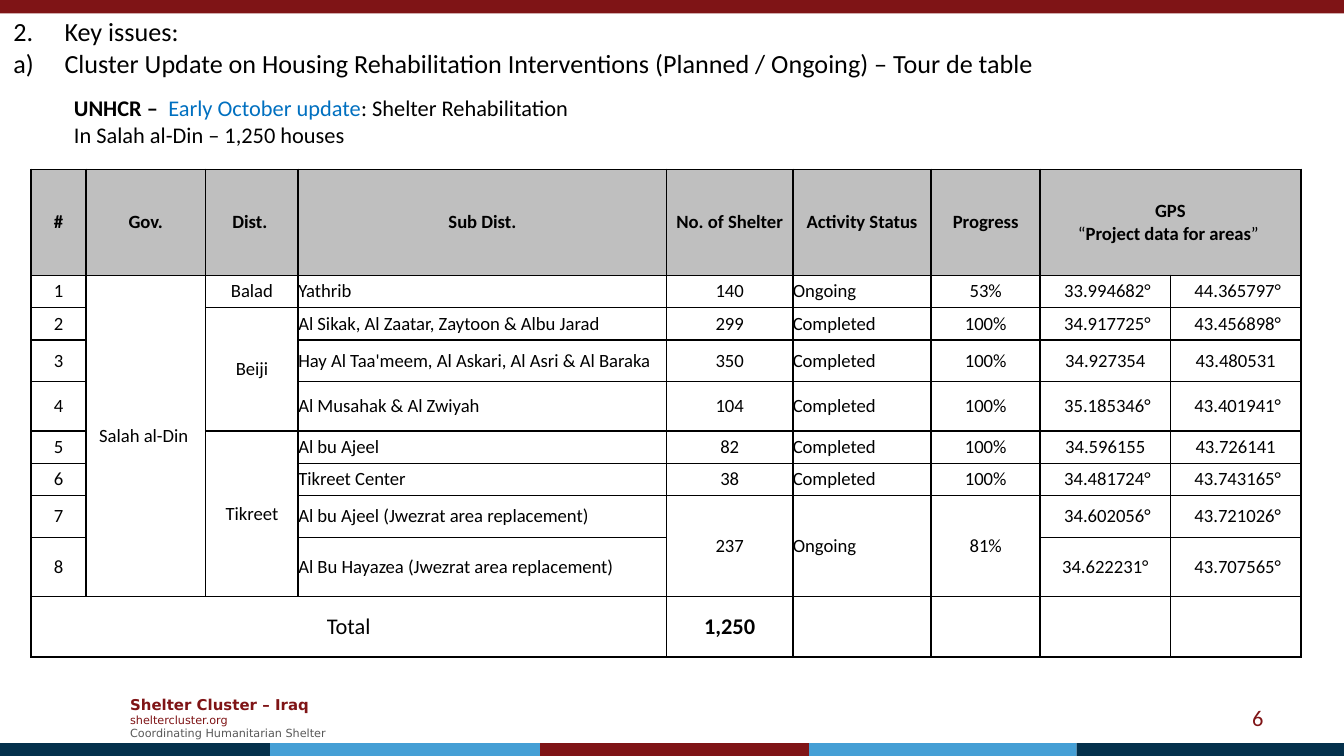
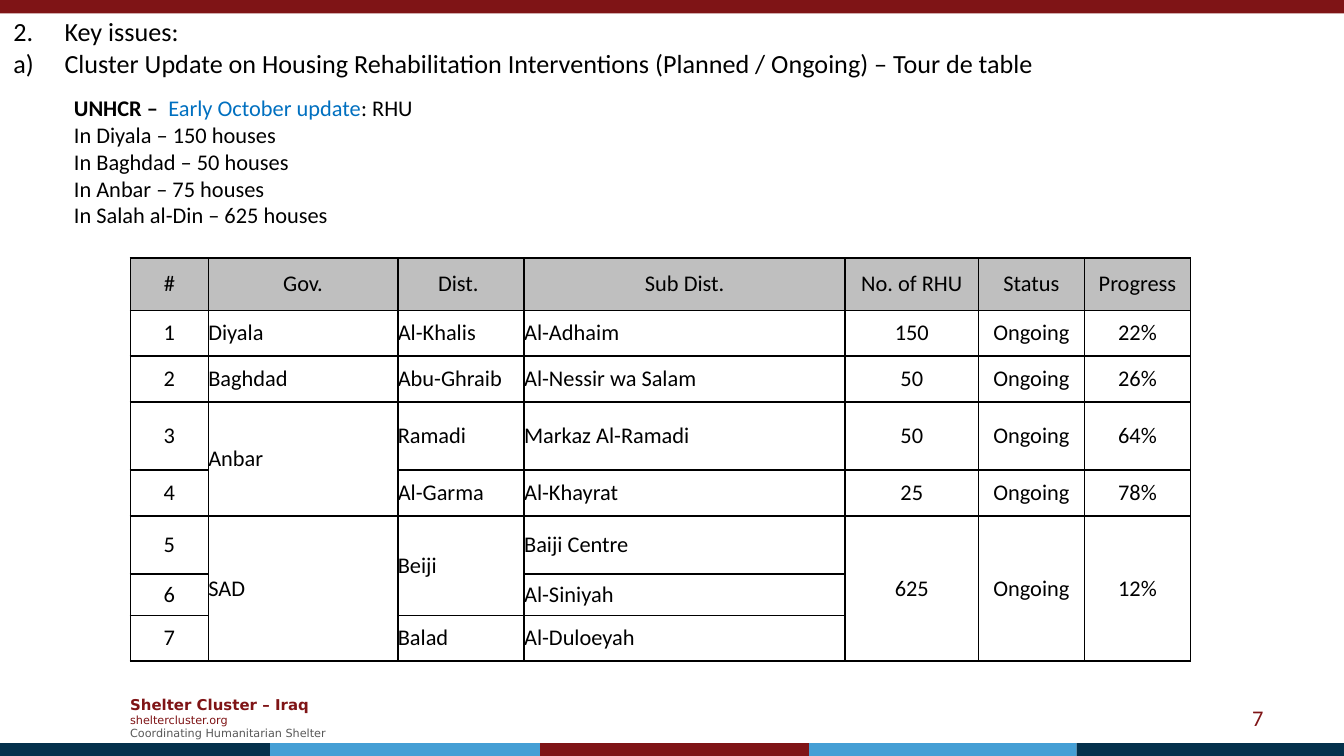
from dataclasses import dataclass
from lxml.etree import SubElement
from pptx import Presentation
from pptx.dml.color import RGBColor
from pptx.enum.shapes import MSO_SHAPE
from pptx.enum.text import MSO_ANCHOR, MSO_AUTO_SIZE, PP_ALIGN
from pptx.oxml.ns import qn
from pptx.util import Inches, Pt


@dataclass(frozen=True)
class Theme:
    red: str = "7F1416"
    navy: str = "04314C"
    sky: str = "459FD5"
    link: str = "0070C0"
    gray: str = "595959"
    head: str = "BFBFBF"
    black: str = "000000"
    sans: str = "Calibri"
    brand: str = "DejaVu Sans"
    title: int = 14
    text: int = 12
    cell: int = 10
    name: int = 8
    small: int = 6


T = Theme()
PLAIN = {"name": T.sans, "size": T.text, "bold": False, "color": T.black}
BOLD = {"bold": True}
GPS = [[("GPS", {})], [("“", {"bold": False}), ("Project data for areas", {}), ("” ", {"bold": False})]]

HOMES = [
    ["#", "Gov.", "Dist. ", "Sub Dist.", "No. of Shelter", "Activity Status", "Progress", GPS, "<"],
    ["1", "Salah al-Din ", "Balad", "Yathrib", "140", "Ongoing", "53%", " 33.994682°", " 44.365797°"],
    ["2", "^", "Beiji", "Al Sikak, Al Zaatar, Zaytoon & Albu Jarad", "299", "Completed", "100%",
     " 34.917725°", " 43.456898°"],
    ["3", "^", "^", "Hay Al Taa'meem, Al Askari, Al Asri & Al Baraka", "350", "Completed", "100%",
     "34.927354", "43.480531"],
    ["4", "^", "^", "Al Musahak & Al Zwiyah", "104", "Completed", "100%", " 35.185346°", " 43.401941°"],
    ["5", "^", "Tikreet", "Al bu Ajeel", "82", "Completed", "100%", "34.596155", "43.726141"],
    ["6", "^", "^", "Tikreet Center", "38", "Completed", "100%", " 34.481724°", " 43.743165°"],
    ["7", "^", "^", "Al bu Ajeel (Jwezrat area replacement)", "237", "Ongoing", "81%",
     " 34.602056°", " 43.721026°"],
    ["8", "^", "^", "Al Bu Hayazea (Jwezrat area replacement)", "^", "^", "^", "34.622231°", " 43.707565°"],
    [[[("Total", {"size": T.text})]], "<", "<", "<", [[("1,250", {"size": T.text, **BOLD})]], "", "", "", ""],
]

UNITS = [
    ["#", "Gov.", "Dist. ", "Sub Dist.", "No. of RHU", "Status", "Progress"],
    ["1", "Diyala", "Al-Khalis", "Al-Adhaim", "150", "Ongoing", "22%"],
    ["2", "Baghdad", "Abu-Ghraib", "Al-Nessir wa Salam", "50", "Ongoing", "26%"],
    ["3", "Anbar", "Ramadi", "Markaz Al-Ramadi", "50", "Ongoing", "64%"],
    ["4", "^", "Al-Garma", "Al-Khayrat", "25", "Ongoing", "78%"],
    ["5", "SAD", "Beiji", "Baiji Centre", "625", "Ongoing", "12%"],
    ["6", "^", "^", "Al-Siniyah", "^", "^", "^"],
    ["7", "^", "Balad", "Al-Duloeyah", "^", "^", "^"],
]


def assign(item, form):
    for key, value in form.items():
        setattr(item, key, value)


def style(font, form):
    form = dict(form, size=Pt(form["size"]))
    font.color.rgb = RGBColor.from_string(form.pop("color"))
    assign(font, form)


def place(shape, left, top, width, height):
    spots = {"left": left, "top": top, "width": width, "height": height}
    assign(shape, {key: Inches(value) for key, value in spots.items()})


def write(frame, paras, base, align=PP_ALIGN.LEFT):
    for num, runs in enumerate(paras):
        para = frame.add_paragraph() if num else frame.paragraphs[0]
        assign(para, {"alignment": align, "space_before": Pt(0)})
        for text, form in runs:
            run = para.add_run()
            run.text = text
            style(run.font, {**base, **form})


def mark(para, tag, indent=0, **attrs):
    props = para._p.get_or_add_pPr()
    props.set("marL", str(Inches(indent)))
    props.set("indent", str(-Inches(indent)))
    SubElement(props, qn(tag), attrs)


def fit(frame, anchor):
    assign(frame, {"word_wrap": True, "auto_size": MSO_AUTO_SIZE.NONE, "vertical_anchor": anchor})


def label(slide, spot, paras, base, align=PP_ALIGN.LEFT):
    frame = slide.shapes.add_textbox(*map(Inches, spot)).text_frame
    fit(frame, MSO_ANCHOR.MIDDLE)
    write(frame, paras, base, align)


def band(slide, spot, color):
    shape = slide.shapes.add_shape(MSO_SHAPE.RECTANGLE, *map(Inches, spot))
    shape.shadow.inherit = False
    shape.fill.solid()
    shape.fill.fore_color.rgb = RGBColor.from_string(color)
    shape.line.fill.background()


def trim(slide, page):
    band(slide, (0, 0, 10, 0.1), T.red)
    edges = (0, 2.01, 4.02, 6.02, 8.01, 10)
    colors = (T.navy, T.sky, T.red, T.sky, T.navy)
    for left, right, color in zip(edges, edges[1:], colors):
        band(slide, (left, 5.53, right - left, 0.1), color)
    label(slide, (0.87, 5.12, 1.73, 0.44), [
        [("Shelter Cluster – Iraq", {"size": T.name, **BOLD})],
        [("sheltercluster.org", {})],
        [("Coordinating Humanitarian Shelter", {"color": T.gray})],
    ], {**PLAIN, "name": T.brand, "size": T.small, "color": T.red})
    label(slide, (7.17, 5.19, 2.33, 0.3), [[(str(page), {})]],
          {**PLAIN, "color": T.red}, PP_ALIGN.RIGHT)


def title(slide):
    shape = slide.shapes.title
    place(shape, 0, 0.15, 10, 0.4)
    frame = shape.text_frame
    fit(frame, MSO_ANCHOR.MIDDLE)
    write(frame, [
        [("Key issues:", {})],
        [("Cluster Update on Housing Rehabilitation Interventions (Planned / Ongoing) – Tour de table", {})],
    ], {**PLAIN, "size": T.title})
    first, second = frame.paragraphs
    mark(first, "a:buAutoNum", 0.38, type="arabicPeriod", startAt="2")
    mark(second, "a:buAutoNum", 0.38, type="alphaLcParenR")


def update(slide, topic, lines, height):
    shape = slide.placeholders[1]
    place(shape, 0.45, 0.65, 7.48, height)
    frame = shape.text_frame
    fit(frame, MSO_ANCHOR.TOP)
    lead = [("UNHCR –  ", BOLD), ("Early October update", {"color": T.link}), (f": {topic}", {})]
    write(frame, [lead] + [[(line, {})] for line in lines], PLAIN)
    for para in frame.paragraphs:
        mark(para, "a:buNone")


def border(cell):
    props = cell._tc.get_or_add_tcPr()
    for side in ("a:lnL", "a:lnR", "a:lnT", "a:lnB"):
        line = SubElement(props, qn(side), w=str(Pt(1)))
        fill = SubElement(line, qn("a:solidFill"))
        SubElement(fill, qn("a:srgbClr"), val=T.black)


def fill_cell(cell, text, base, align, head):
    sides = ("left", "right", "top", "bottom")
    assign(cell, {f"margin_{side}": 0 for side in sides})
    cell.vertical_anchor = MSO_ANCHOR.MIDDLE
    border(cell)
    if head:
        cell.fill.solid()
        cell.fill.fore_color.rgb = RGBColor.from_string(T.head)
    else:
        cell.fill.background()
    if text in ("", "<", "^"):
        SubElement(cell.text_frame.paragraphs[0]._p, qn("a:endParaRPr"), sz=str(base["size"] * 100))
    else:
        paras = [[(text, {})]] if isinstance(text, str) else text
        write(cell.text_frame, paras, base, align)


def reach(cells, sign):
    count = 0
    while count < len(cells) and cells[count] == sign:
        count += 1
    return count


def grid(slide, left, top, cols, rows, data, size, lefts, bold=False):
    spot = map(Inches, (left, top, sum(cols), sum(rows)))
    table = slide.shapes.add_table(len(rows), len(cols), *spot).table
    assign(table, {"first_row": False, "horz_banding": False})
    for col, width in zip(table.columns, cols):
        col.width = Inches(width)
    for row, height in zip(table.rows, rows):
        row.height = Inches(height)
    for r, line in enumerate(data):
        for c, text in enumerate(line):
            head = r == 0
            align = PP_ALIGN.LEFT if c in lefts and not head else PP_ALIGN.CENTER
            base = {**PLAIN, "size": size, "bold": bold and head}
            fill_cell(table.cell(r, c), text, base, align, head)
    for r, line in enumerate(data):
        for c, text in enumerate(line):
            across = reach(line[c + 1:], "<")
            down = reach([row[c] for row in data[r + 1:]], "^")
            if text not in ("<", "^") and across + down:
                table.cell(r, c).merge(table.cell(r + down, c + across))


def page(deck, num, topic, lines, height):
    slide = deck.slides.add_slide(deck.slide_layouts[1])
    trim(slide, num)
    title(slide)
    update(slide, topic, lines, height)
    return slide


def main():
    deck = Presentation()
    assign(deck, {"slide_width": Inches(10), "slide_height": Inches(10 * 9 / 16)})

    slide = page(deck, 6, "Shelter Rehabilitation", ["In Salah al-Din – 1,250 houses"], 0.5)
    grid(slide, 0.23, 1.26, (0.41, 0.89, 0.69, 2.74, 0.94, 1.03, 0.81, 0.97, 0.97),
         (0.79, 0.24, 0.24, 0.31, 0.37, 0.24, 0.24, 0.31, 0.44, 0.45),
         HOMES, T.cell, (3, 5), bold=True)

    slide = page(deck, 7, "RHU", [
        "In Diyala – 150 houses",
        "In Baghdad – 50 houses",
        "In Anbar – 75 houses",
        "In Salah al-Din – 625 houses",
    ], 1.11)
    grid(slide, 0.97, 1.92, (0.58, 1.41, 0.94, 2.39, 0.99, 0.79, 0.79),
         (0.39, 0.34, 0.34, 0.51, 0.34, 0.43, 0.31, 0.34), UNITS, T.text, (1, 2, 3))

    deck.save("out.pptx")


if __name__ == "__main__":
    main()
